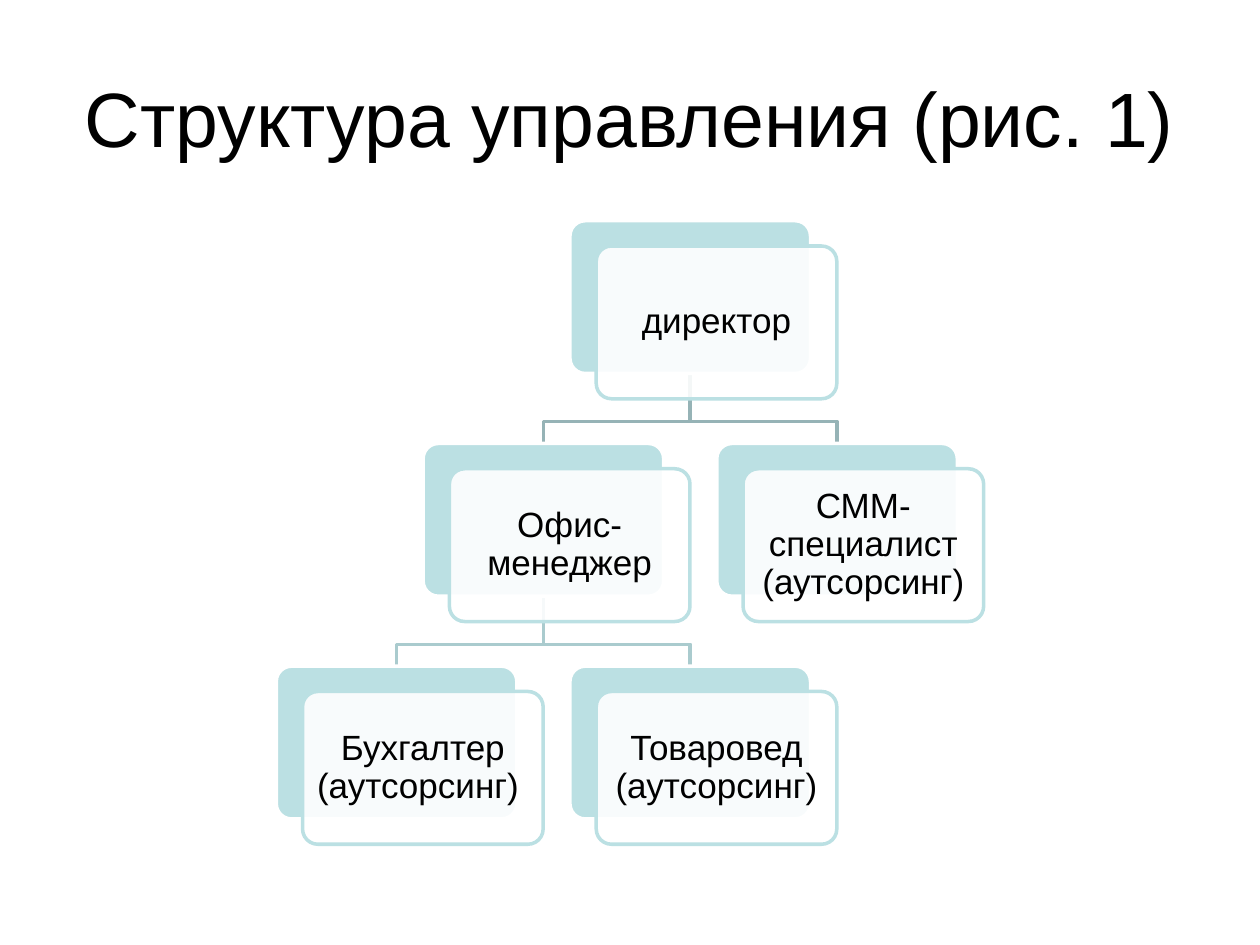
"""Builds a slide with the management structure chart."""
import lxml.etree
import pptx
import pptx.dml.color
import pptx.enum.shapes
import pptx.enum.text
import pptx.oxml.ns
import pptx.util

Cm = pptx.util.Cm
Pt = pptx.util.Pt

COLOURS = {
    "text": "000000",
    "white": "FFFFFF",
    "card": "BBE0E3",
    "upper_link": "96B3B6",
    "lower_link": "AACBCE",
}
FONT = "Arial"
CARD_WIDTH, CARD_HEIGHT = 4.85, 3.08
SHIFT_X, SHIFT_Y = 0.53, 0.51
CHART_LEFT, CHART_TOP = 5.57, 4.45
COLUMN_STEP, LEVEL_STEP = 2.96, 4.49
BEND_DROP = 0.97

POSTS = {
    "director": ("директор", 2, 0),
    "manager": ("Офис-менеджер", 1, 1),
    "accountant": ("Бухгалтер (аутсорсинг) ", 0, 2),
    "merchandiser": ("Товаровед (аутсорсинг)", 2, 2),
    "marketer": ("СММ-специалист (аутсорсинг)", 3, 1),
}
LINKS = [
    ("director", "marketer", "upper_link"),
    ("manager", "merchandiser", "lower_link"),
    ("manager", "accountant", "lower_link"),
    ("director", "manager", "upper_link"),
]


def corner(post):
    _, column, level = POSTS[post]
    return CHART_LEFT + column * COLUMN_STEP, CHART_TOP + level * LEVEL_STEP


class Painter:
    """Holds the style and the current slide."""

    def __init__(self, page, font, colours):
        self.page = page
        self.font = font
        self.colours = colours

    def colour(self, name):
        return pptx.dml.color.RGBColor.from_string(self.colours[name])

    def label(self, shape, text, size, inset_x, inset_y):
        frame = shape.text_frame
        frame.word_wrap = True
        frame.vertical_anchor = pptx.enum.text.MSO_ANCHOR.MIDDLE
        frame.margin_left = frame.margin_right = Cm(inset_x)
        frame.margin_top = frame.margin_bottom = Cm(inset_y)
        para = frame.paragraphs[0]
        para.alignment = pptx.enum.text.PP_ALIGN.CENTER
        span = para.add_run()
        span.text = text
        span.font.name = self.font
        span.font.size = Pt(size)
        span.font.color.rgb = self.colour("text")
        return para

    def title(self, text, left, top, width, height):
        box = self.page.shapes.add_textbox(Cm(left), Cm(top), Cm(width), Cm(height))
        self.label(box, text, 44, 0.25, 0.13)

    def outline(self, shape, line):
        shape.shadow.inherit = False
        shape.line.color.rgb = self.colour(line)
        shape.line.width = Pt(2)

    def panel(self, left, top, fill, line):
        box = self.page.shapes.add_shape(
            pptx.enum.shapes.MSO_SHAPE.ROUNDED_RECTANGLE,
            Cm(left), Cm(top), Cm(CARD_WIDTH), Cm(CARD_HEIGHT))
        box.adjustments[0] = 0.1
        box.fill.solid()
        box.fill.fore_color.rgb = self.colour(fill)
        self.outline(box, line)
        return box

    def card(self, post):
        left, top = corner(post)
        self.panel(left, top, "card", "white")
        front = self.panel(left + SHIFT_X, top + SHIFT_Y, "white", "card")
        tint = front.element.spPr.find(
            pptx.oxml.ns.qn("a:solidFill") + "/" + pptx.oxml.ns.qn("a:srgbClr"))
        lxml.etree.SubElement(tint, pptx.oxml.ns.qn("a:alpha"), val="90000")
        para = self.label(front, POSTS[post][0], 20, 0.11, 0.11)
        para.line_spacing = 0.9

    def link(self, parent, child, line):
        parent_left, parent_top = corner(parent)
        child_left, child_top = corner(child)
        start_x, end_x = parent_left + CARD_WIDTH / 2, child_left + CARD_WIDTH / 2
        start_y = parent_top + CARD_HEIGHT
        bend_y = start_y + BEND_DROP
        builder = self.page.shapes.build_freeform(Cm(start_x), Cm(start_y))
        corners = [(start_x, bend_y), (end_x, bend_y), (end_x, child_top)]
        builder.add_line_segments([(Cm(x), Cm(y)) for x, y in corners], close=False)
        elbow = builder.convert_to_shape()
        elbow.fill.background()
        self.outline(elbow, line)


def main():
    deck = pptx.Presentation()
    deck.slide_width, deck.slide_height = Cm(25.4), Cm(19.05)
    page = deck.slides.add_slide(deck.slide_layouts[6])
    painter = Painter(page, FONT, COLOURS)
    painter.title("Структура управления (рис. 1)", 1.27, 0.76, 22.86, 3.18)
    for parent, child, line in LINKS:
        painter.link(parent, child, line)
    for post in POSTS:
        painter.card(post)
    deck.save("out.pptx")


if __name__ == "__main__":
    main()
